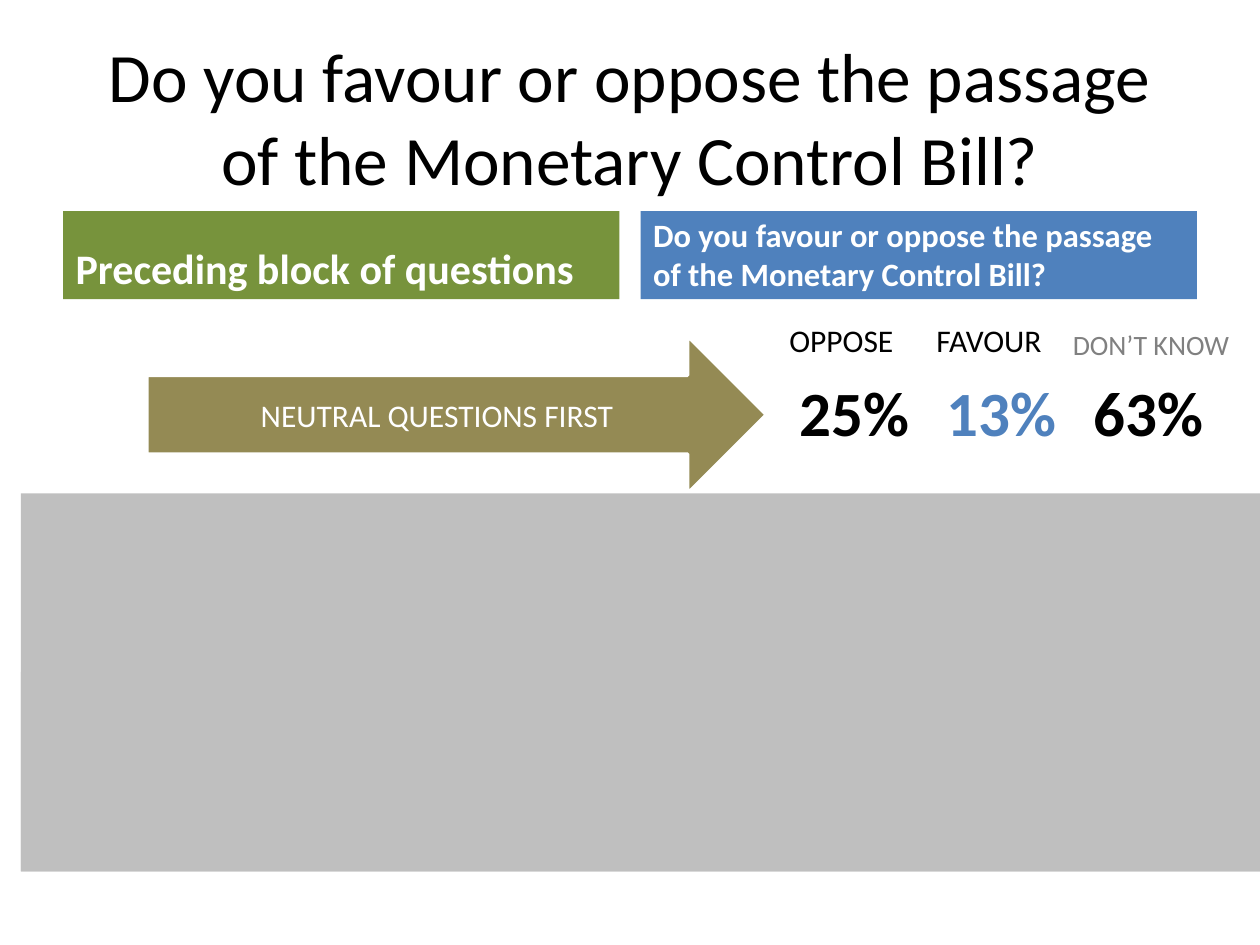
from dataclasses import dataclass

from pptx import Presentation
from pptx.dml.color import RGBColor
from pptx.enum.shapes import MSO_SHAPE
from pptx.enum.text import MSO_ANCHOR, MSO_AUTO_SIZE, PP_ALIGN
from pptx.util import Emu, Pt

RECTANGLE = MSO_SHAPE.RECTANGLE
RIGHT_ARROW = MSO_SHAPE.RIGHT_ARROW
MIDDLE, BOTTOM, TOP = MSO_ANCHOR.MIDDLE, MSO_ANCHOR.BOTTOM, MSO_ANCHOR.TOP
LEFT, CENTER = PP_ALIGN.LEFT, PP_ALIGN.CENTER
NO_AUTOFIT = MSO_AUTO_SIZE.NONE
FIT_SHAPE = MSO_AUTO_SIZE.SHAPE_TO_FIT_TEXT

EMU_PER_PX = 7620  # 120 px to the inch
COMPARISON_LAYOUT = 4
QUESTION = "Do you favour or oppose the passage of the Monetary Control Bill?"


@dataclass(frozen=True)
class Theme:
    font: str = "Calibri"
    black: str = "000000"
    white: str = "FFFFFF"
    green: str = "77933C"
    blue: str = "4F81BD"
    olive: str = "948A54"
    grey_text: str = "808080"
    grey_panel: str = "BFBFBF"
    title_size: float = 39.6
    heading_size: float = 24
    question_size: float = 18.6
    label_size: float = 18
    minor_label_size: float = 16
    percent_size: float = 36


THEME = Theme()


def px(length):
    return Emu(length * EMU_PER_PX)


def place(shape, box):
    shape.left, shape.top, shape.width, shape.height = map(px, box)


def fill_solid(shape, color):
    shape.fill.solid()
    shape.fill.fore_color.rgb = RGBColor.from_string(color)


def write(shape, text, size, color, bold=False, align=LEFT, anchor=TOP,
          wrap=True, auto_size=NO_AUTOFIT):
    frame = shape.text_frame
    frame.word_wrap = wrap
    frame.auto_size = auto_size
    frame.vertical_anchor = anchor
    paragraph = frame.paragraphs[0]
    paragraph.alignment = align
    run = paragraph.add_run()
    run.text = text
    run.font.name = THEME.font
    run.font.size = Pt(size)
    run.font.bold = bold
    run.font.color.rgb = RGBColor.from_string(color)


def add_title(slide):
    title = slide.shapes.title
    place(title, (60, 36, 1080, 150))
    write(title, QUESTION, THEME.title_size, THEME.black, align=CENTER, anchor=MIDDLE)


def add_heading(slide, placeholder_index, left, text, size, color):
    heading = slide.placeholders[placeholder_index]
    place(heading, (left, 201, 530, 84))
    fill_solid(heading, color)
    write(heading, text, size, THEME.white, bold=True, anchor=BOTTOM)


def add_block(slide, preset, box, color):
    block = slide.shapes.add_shape(preset, *map(px, box))
    block.shadow.inherit = False
    fill_solid(block, color)
    block.line.fill.background()
    return block


def add_arrow(slide, text):
    arrow = add_block(slide, RIGHT_ARROW, (140, 320, 590, 150), THEME.olive)
    arrow.line.color.rgb = RGBColor.from_string(THEME.white)
    arrow.line.width = Pt(2)
    write(arrow, text, THEME.label_size, THEME.white, align=CENTER, anchor=MIDDLE)


def add_label(slide, box, text, size, color, bold=False, wrap=True):
    label = slide.shapes.add_textbox(*map(px, box))
    write(label, text, size, color, bold, wrap=wrap, auto_size=FIT_SHAPE)


def add_results(slide):
    label, minor = THEME.label_size, THEME.minor_label_size
    answers = [
        ("OPPOSE", (740, 300, 140, 48), label, THEME.black, "25%", 750, THEME.black),
        ("FAVOUR", (880, 300, 140, 48), label, THEME.black, "13%", 890, THEME.blue),
        ("DON’T KNOW", (1010, 306, 190, 44), minor, THEME.grey_text,
         "63%", 1030, THEME.black),
    ]
    for name, box, size, color, percent, percent_left, percent_color in answers:
        add_label(slide, box, name, size, color)
        add_label(slide, (percent_left, 350, 130, 85), percent, THEME.percent_size,
                  percent_color, bold=True, wrap=False)


def remove_empty_placeholders(slide):
    for placeholder in list(slide.placeholders):
        if not placeholder.text_frame.text:
            element = placeholder.element
            element.getparent().remove(element)


def main():
    presentation = Presentation()
    presentation.slide_width, presentation.slide_height = px(1200), px(900)
    slide = presentation.slides.add_slide(
        presentation.slide_layouts[COMPARISON_LAYOUT])

    add_title(slide)
    add_heading(slide, 1, 60, "Preceding block of questions",
                THEME.heading_size, THEME.green)
    add_heading(slide, 3, 610, QUESTION, THEME.question_size, THEME.blue)
    remove_empty_placeholders(slide)
    add_arrow(slide, "NEUTRAL QUESTIONS FIRST")
    add_results(slide)
    for top, height in ((470, 360), (640, 190)):
        add_block(slide, RECTANGLE, (20, top, 1180, height), THEME.grey_panel)

    presentation.save("out.pptx")


if __name__ == "__main__":
    main()
